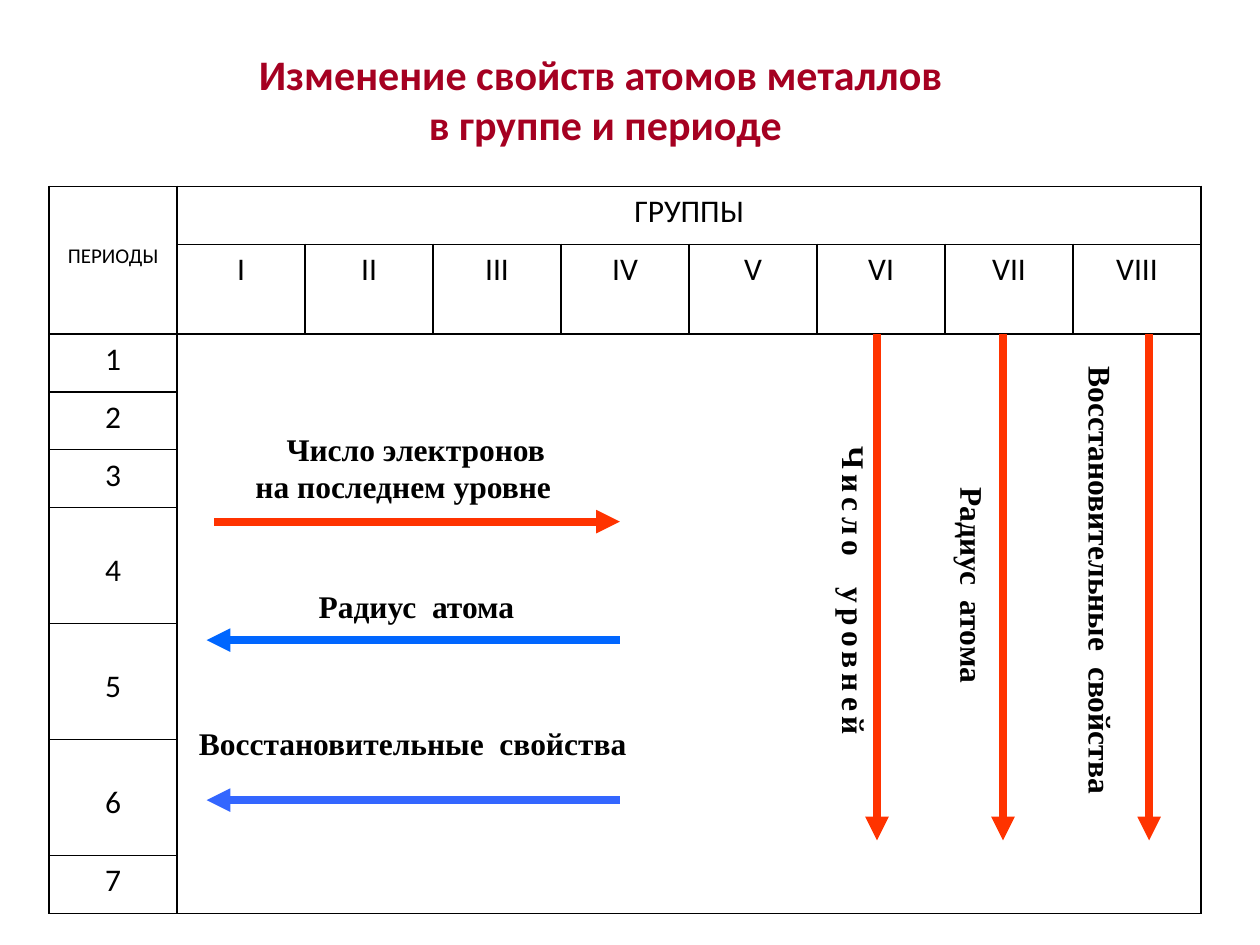
from lxml import etree
from pptx import Presentation
from pptx.dml.color import RGBColor
from pptx.enum.shapes import MSO_CONNECTOR
from pptx.enum.text import MSO_ANCHOR, PP_ALIGN
from pptx.oxml import parse_xml
from pptx.oxml.ns import nsdecls, qn
from pptx.util import Inches, Pt

COLORS = {"text": "000000", "cell": "FFFFFF", "title": "A50021",
          "red": "FF3300", "sky": "0066FF", "blue": "3366FF"}
COL, ROW, ROMAN_ROW = 1.016, 0.46, 0.71
ROWS, COLS = 12, 9
LEFT, TOP = 0.39, 1.48
BODY_TOP = TOP + ROW + ROMAN_ROW


def add_label(box, lines, font="Times New Roman", size=18, color="text",
              align=PP_ALIGN.CENTER):
    """Add a bold text box; return its text frame."""
    tf = s.shapes.add_textbox(*map(Inches, box)).text_frame
    tf.word_wrap = True
    for i, line in enumerate(lines):
        p = tf.paragraphs[0] if i == 0 else tf.add_paragraph()
        p.text, p.alignment = line, align
        p.font.name, p.font.size, p.font.bold = font, Pt(size), True
        p.font.color.rgb = RGBColor.from_string(COLORS[color])
    return tf


def add_arrow(x1, y1, x2, y2, color):
    line = s.shapes.add_connector(MSO_CONNECTOR.STRAIGHT,
                                  *map(Inches, (x1, y1, x2, y2)))
    line.line.width = Pt(4.5)
    line.line.color.rgb = RGBColor.from_string(COLORS[color])
    etree.SubElement(line.line._get_or_add_ln(), qn("a:tailEnd"), type="triangle")
    etree.SubElement(line._element.spPr, qn("a:effectLst"))


prs = Presentation()
prs.slide_width, prs.slide_height = Inches(10), Inches(7.5)
s = prs.slides.add_slide(prs.slide_layouts[6])

# Table: header rows, periods on the left, one open field for the arrows
table = s.shapes.add_table(ROWS, COLS, Inches(LEFT), Inches(TOP),
                           Inches(COLS * COL),
                           Inches((ROWS - 1) * ROW + ROMAN_ROW)).table
for col in table.columns:
    col.width = Inches(COL)
for i, row in enumerate(table.rows):
    row.height = Inches(ROMAN_ROW if i == 1 else ROW)

# (row, column, text, rows spanned, columns spanned, size, top margin)
cells = [(0, 0, "ПЕРИОДЫ", 2, 1, 12, 0.45), (0, 1, "ГРУППЫ", 1, 8, 18, 0.05)]
for i, roman in enumerate("I II III IV V VI VII VIII".split(), 1):
    cells.append((1, i, roman, 1, 1, 18, 0.05))
row = 2
for period in range(1, 8):
    span = 2 if period in (4, 5, 6) else 1
    cells.append((row, 0, str(period), span, 1, 18, 0.35 if span == 2 else 0.05))
    row += span

for row, col, text, rows, cols, size, margin in cells:
    cell = table.cell(row, col)
    if rows * cols > 1:
        cell.merge(table.cell(row + rows - 1, col + cols - 1))
    cell.margin_top = Inches(margin)
    p = cell.text_frame.paragraphs[0]
    p.text, p.alignment = text, PP_ALIGN.CENTER
    p.font.name, p.font.size, p.font.bold = "Calibri", Pt(size), False
    p.font.color.rgb = RGBColor.from_string(COLORS["text"])

ruled = f'<a:solidFill><a:srgbClr val="{COLORS["text"]}"/></a:solidFill>'
for i, cell in enumerate(table.iter_cells()):
    row, col = divmod(i, COLS)
    header = row < 2 or col == 0
    edges = {"lnL": header or col == 1, "lnR": header or col == COLS - 1,
             "lnT": header or row == 2, "lnB": header or row == ROWS - 1}
    tcPr = cell._tc.get_or_add_tcPr()
    for side, visible in edges.items():
        tcPr.append(parse_xml(f'<a:{side} {nsdecls("a")} w="12700">'
                              f'{ruled if visible else "<a:noFill/>"}</a:{side}>'))
    cell.fill.solid()
    cell.fill.fore_color.rgb = RGBColor.from_string(COLORS["cell"])

tf = add_label((0.94, 0.16, 7.73, 1.25),
               ["Изменение свойств атомов металлов ", "в группе и периоде"],
               "Calibri", 24, "title")
tf.vertical_anchor = MSO_ANCHOR.MIDDLE

# Changes along a period
ARROW_LEFT, ARROW_RIGHT = 1.64, 4.92
add_arrow(1.7, 4.14, ARROW_RIGHT, 4.14, "red")
tf = add_label((1.64, 3.36, 3.12, 0.71),
               ["Число электронов", "на последнем уровне"])
tf.paragraphs[0]._p.get_or_add_pPr().set("marL", str(Inches(0.2)))
for y, color in ((5.08, "sky"), (6.35, "blue")):
    add_arrow(ARROW_RIGHT, y, ARROW_LEFT, y, color)
add_label((2.11, 4.61, 2.39, 0.4), ["Радиус  атома"])
add_label((1.48, 5.7, 3.75, 0.4), ["Восстановительные  свойства"],
          align=PP_ALIGN.LEFT)

# Changes down a group: arrow x, label box, text, line spacing, tracking
for x, box, text, spacing, tracking in (
        (6.96, (6.48, 2.81, 0.42, 3.75), "Число  уровней", 0.7, 3),
        (7.96, (7.42, 2.81, 0.42, 3.67), "Радиус  атома", 0.7, 0),
        (9.12, (8.44, 2.73, 0.5, 3.75), "Восстановительные  свойства", 1, 0)):
    add_arrow(x, BODY_TOP, x, 6.67, "red")
    tf = add_label(box, [text])
    tf._txBody.bodyPr.set("vert", "vert")
    p = tf.paragraphs[0]
    p.line_spacing = spacing
    p.runs[0]._r.get_or_add_rPr().set("spc", str(tracking * 100))

prs.save("out.pptx")
